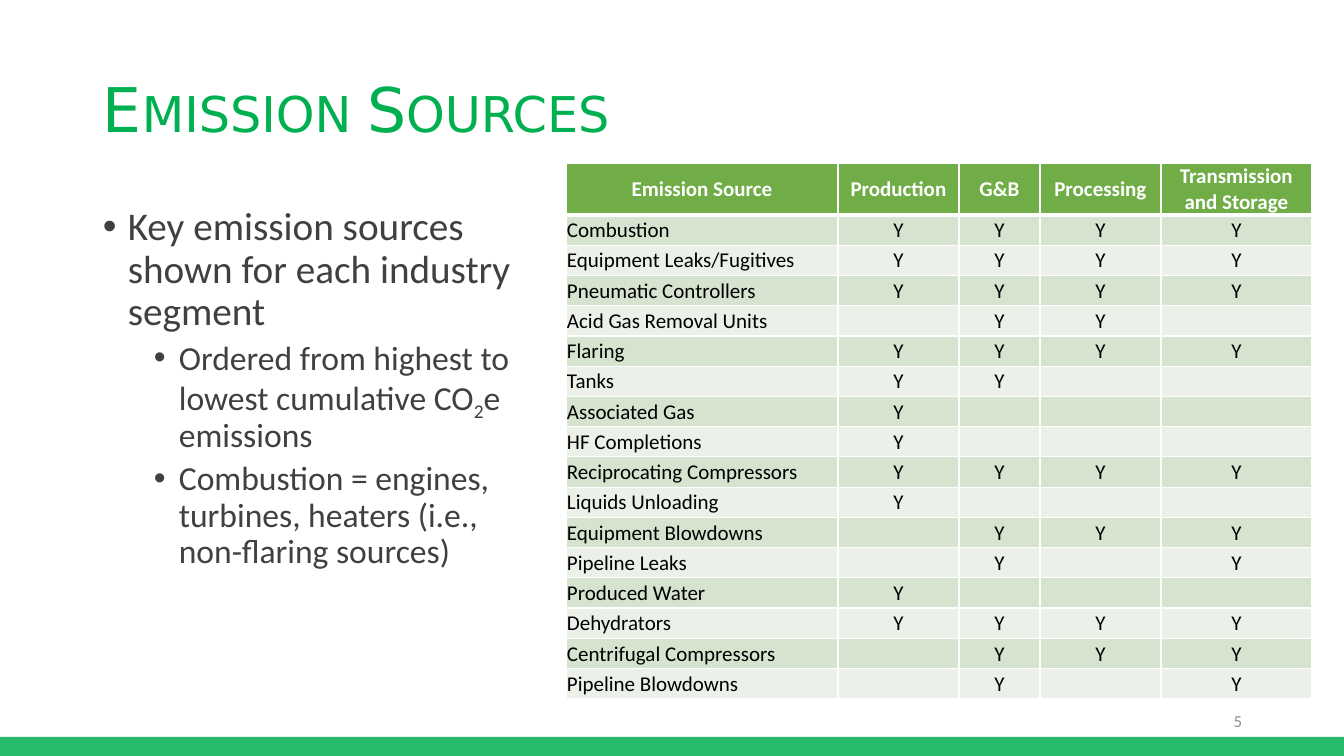
from lxml.etree import SubElement
from pptx import Presentation
from pptx.dml.color import RGBColor
from pptx.enum.shapes import MSO_SHAPE
from pptx.enum.text import MSO_ANCHOR, PP_ALIGN
from pptx.oxml.ns import qn
from pptx.util import Emu, Pt

EMU_PER_PX = 914400 / 100.8
SLIDE_WIDTH, SLIDE_HEIGHT = 1344, 756
COLORS = {
    "green": "00B050",
    "header": "70AD47",
    "band_dark": "D5E3CF",
    "band_light": "EBF1E9",
    "body": "404040",
    "number": "8C8C8C",
    "black": "000000",
    "white": "FFFFFF",
}

TITLE_FORMAT = {"name": "DejaVu Sans", "size": Pt(44)}
NUMBER_FORMAT = {"name": "Calibri", "size": Pt(12)}
CELL_FORMAT = {"name": "Calibri", "size": Pt(15)}

# Each level: left indent in px, text size and space before in points
BULLET_LEVELS = [(25, 28, 10), (76, 24, 5)]
HANGING = 25
SUBSCRIPT = "-25000"
BULLETS = [
    (0, [("Key emission sources shown for each industry segment", None)]),
    (1, [("Ordered from highest to lowest cumulative CO", None),
         ("2", SUBSCRIPT), ("e emissions", None)]),
    (1, [("Combustion = engines, turbines, heaters (i.e., non-flaring sources)", None)]),
]

COLUMN_WIDTHS = [272, 121, 81, 121, 151]
HEADER_HEIGHT, BODY_HEIGHT = 52, 484
HEADINGS = ["Emission Source", "Production", "G&B", "Processing",
            "Transmission and Storage"]
# One mark for each segment column; "-" leaves the cell empty
SOURCES = [
    ("Combustion", "YYYY"),
    ("Equipment Leaks/Fugitives", "YYYY"),
    ("Pneumatic Controllers", "YYYY"),
    ("Acid Gas Removal Units", "-YY-"),
    ("Flaring", "YYYY"),
    ("Tanks", "YY--"),
    ("Associated Gas", "Y---"),
    ("HF Completions", "Y---"),
    ("Reciprocating Compressors", "YYYY"),
    ("Liquids Unloading", "Y---"),
    ("Equipment Blowdowns", "-YYY"),
    ("Pipeline Leaks", "-Y-Y"),
    ("Produced Water", "Y---"),
    ("Dehydrators", "YYYY"),
    ("Centrifugal Compressors", "-YYY"),
    ("Pipeline Blowdowns", "-Y-Y"),
]


def px(length):
    return Emu(round(length * EMU_PER_PX))


def set_attributes(target, values):
    for name, value in values.items():
        setattr(target, name, value)


def rgb(color):
    return RGBColor.from_string(COLORS[color])


def add_run(paragraph, text, color, values):
    run = paragraph.add_run()
    run.text = text
    set_attributes(run.font, values)
    run.font.color.rgb = rgb(color)
    return run


def add_text_box(slide, box, anchor):
    frame = slide.shapes.add_textbox(*map(px, box)).text_frame
    set_attributes(frame, {"word_wrap": True, "vertical_anchor": anchor})
    return frame


def add_footer_bar(slide):
    bar = slide.shapes.add_shape(
        MSO_SHAPE.RECTANGLE, *map(px, (0, 737, SLIDE_WIDTH, 19)))
    bar.shadow.inherit = False
    bar.line.fill.background()
    bar.fill.solid()
    bar.fill.fore_color.rgb = rgb("green")
    color = bar.fill._xPr.find(".//" + qn("a:srgbClr"))
    SubElement(color, qn("a:alpha"), val="85000")


def add_title(slide, text):
    frame = add_text_box(slide, (93, 40, 1159, 146), MSO_ANCHOR.MIDDLE)
    paragraph = frame.paragraphs[0]
    paragraph.line_spacing = 0.9
    run = add_run(paragraph, text, "green", TITLE_FORMAT)
    run.font._element.set("cap", "small")


def add_bullets(slide):
    frame = add_text_box(slide, (93, 202, 452, 480), MSO_ANCHOR.TOP)
    for index, (level, parts) in enumerate(BULLETS):
        paragraph = frame.add_paragraph() if index else frame.paragraphs[0]
        indent, size, space = BULLET_LEVELS[level]
        set_attributes(paragraph, {
            "level": level, "line_spacing": 0.9, "space_before": Pt(space)})
        properties = paragraph._p.get_or_add_pPr()
        properties.set("marL", str(px(indent)))
        properties.set("indent", str(-px(HANGING)))
        SubElement(properties, qn("a:buFont"), typeface="Arial")
        SubElement(properties, qn("a:buChar"), char="•")
        for text, baseline in parts:
            run = add_run(paragraph, text, "body", {"name": "Calibri", "size": Pt(size)})
            if baseline:
                run.font._element.set("baseline", baseline)


def add_slide_number(slide, number):
    frame = add_text_box(slide, (950, 701, 302, 40), MSO_ANCHOR.MIDDLE)
    paragraph = frame.paragraphs[0]
    paragraph.alignment = PP_ALIGN.RIGHT
    add_run(paragraph, number, "number", NUMBER_FORMAT)


def set_borders(cell, widths):
    properties = cell._tc.get_or_add_tcPr()
    for side, width in widths.items():
        line = SubElement(properties, qn(f"a:ln{side}"), w=str(Pt(width)))
        fill = SubElement(line, qn("a:solidFill"))
        SubElement(fill, qn("a:srgbClr"), val=COLORS["white"])


def fill_cell(cell, text, row, column):
    is_header = row == 0
    set_attributes(cell, {
        "margin_left": px(1), "margin_right": px(1), "margin_top": px(1),
        "margin_bottom": 0, "vertical_anchor": MSO_ANCHOR.MIDDLE})
    set_borders(cell, {"L": 1, "R": 1, "T": 3 if row == 1 else 1,
                       "B": 3 if is_header else 1})
    band = "band_dark" if row % 2 else "band_light"
    cell.fill.solid()
    cell.fill.fore_color.rgb = rgb("header" if is_header else band)
    paragraph = cell.text_frame.paragraphs[0]
    paragraph.alignment = PP_ALIGN.CENTER if is_header or column else PP_ALIGN.LEFT
    if text:
        add_run(paragraph, text, "white" if is_header else "black",
                {**CELL_FORMAT, "bold": is_header})
    else:
        # An empty cell keeps the row height only with the smaller text size
        SubElement(paragraph._p, qn("a:endParaRPr"), sz="1500")


def add_source_table(slide):
    rows = [HEADINGS] + [
        [source] + [mark.strip("-") for mark in marks] for source, marks in SOURCES]
    box = (566, 163, sum(COLUMN_WIDTHS), HEADER_HEIGHT + BODY_HEIGHT)
    table = slide.shapes.add_table(
        len(rows), len(HEADINGS), *map(px, box)).table
    table.horz_banding = False
    for column, width in zip(table.columns, COLUMN_WIDTHS):
        column.width = px(width)
    for row, texts in enumerate(rows):
        table.rows[row].height = px(BODY_HEIGHT / len(SOURCES) if row else HEADER_HEIGHT)
        for column, text in enumerate(texts):
            fill_cell(table.cell(row, column), text, row, column)


def main():
    presentation = Presentation()
    set_attributes(presentation, {
        "slide_width": px(SLIDE_WIDTH), "slide_height": px(SLIDE_HEIGHT)})
    slide = presentation.slides.add_slide(presentation.slide_layouts[6])
    add_footer_bar(slide)
    add_title(slide, "Emission Sources")
    add_bullets(slide)
    add_slide_number(slide, "5")
    add_source_table(slide)
    presentation.save("out.pptx")


if __name__ == "__main__":
    main()
